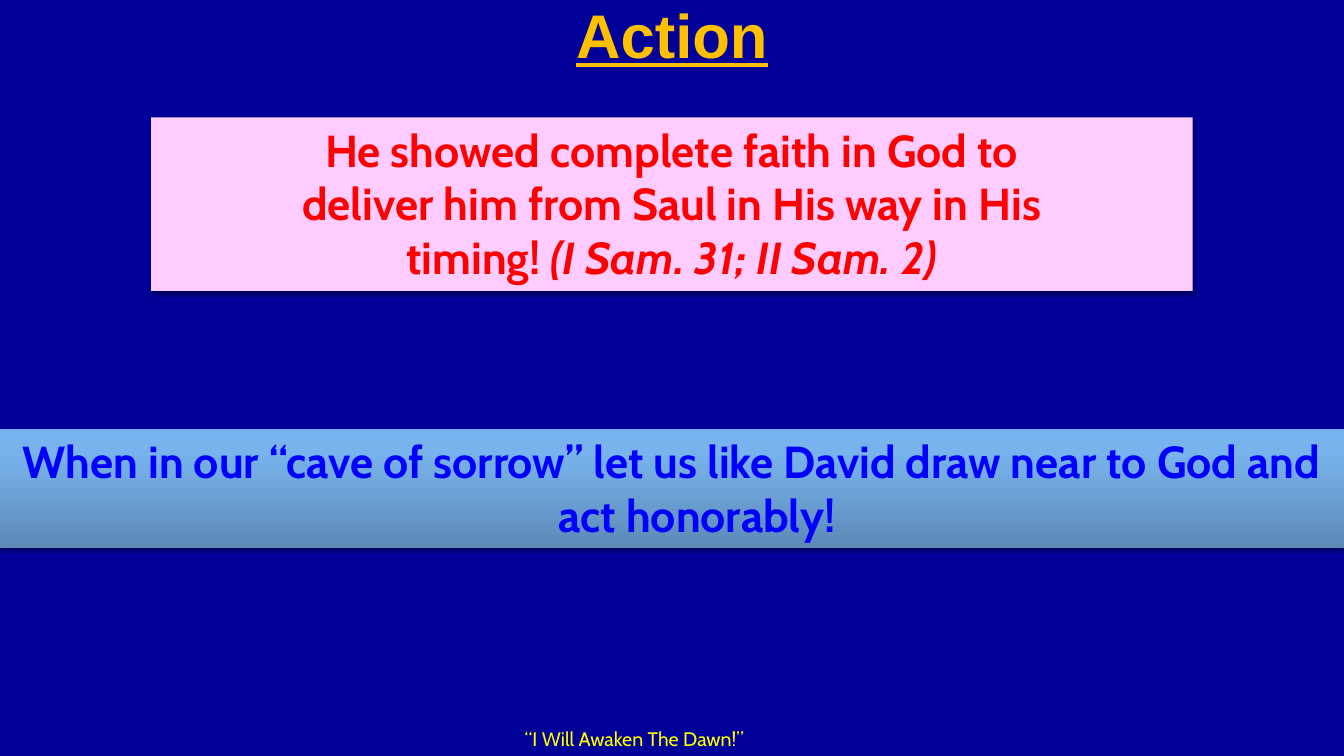
import copy

import pptx
import pptx.dml.color
import pptx.enum.shapes
import pptx.enum.text
import pptx.oxml
import pptx.oxml.ns
import pptx.util

Cm = pptx.util.Cm
Pt = pptx.util.Pt
RGBColor = pptx.dml.color.RGBColor
qn = pptx.oxml.ns.qn

NAVY = RGBColor(0x00, 0x00, 0x99)
GOLD = RGBColor(0xFF, 0xC0, 0x00)
YELLOW = RGBColor(0xFF, 0xFF, 0x00)
PINK = RGBColor(0xFF, 0xCC, 0xFF)
RED = RGBColor(0xFF, 0x00, 0x00)
BLUE = RGBColor(0x00, 0x00, 0xFF)
BAND_STOPS = [
    (0, RGBColor(0x5D, 0x8A, 0xB7)),
    (0.8, RGBColor(0x78, 0xB3, 0xED)),
    (1, RGBColor(0x76, 0xB4, 0xF1)),
]
SLIDE_WIDTH = Cm(33.87)
HANGING = Cm(1.27)
SHADOW = (
    '<a:outerShdw xmlns:a="http://schemas.openxmlformats.org/drawingml/2006/main" '
    'blurRad="40000" dist="23000" dir="5400000" rotWithShape="0">'
    '<a:srgbClr val="000000"><a:alpha val="35000"/></a:srgbClr></a:outerShdw>'
)


def style_run(run, font_name, size, color, bold=False):
    run.font.name = font_name
    run.font.size = Pt(size)
    run.font.color.rgb = color
    run.font.bold = bold


def add_label(slide, text, left, top, width, height, font_name, size, color, bold=False):
    label = slide.shapes.add_textbox(left, top, width, height)
    label.text_frame.word_wrap = True
    label.text_frame.text = text
    paragraph = label.text_frame.paragraphs[0]
    paragraph.alignment = pptx.enum.text.PP_ALIGN.CENTER
    style_run(paragraph.runs[0], font_name, size, color, bold)
    return label


def add_banner(slide, lines, left, top, width, height, color):
    banner = slide.shapes.add_shape(
        pptx.enum.shapes.MSO_SHAPE.RECTANGLE, left, top, width, height)
    banner.line.fill.background()
    banner.shadow.inherit = False
    effects = banner.element.spPr.find(qn("a:effectLst"))
    effects.append(pptx.oxml.parse_xml(SHADOW))
    frame = banner.text_frame
    frame.word_wrap = True
    frame.vertical_anchor = pptx.enum.text.MSO_ANCHOR.TOP
    frame.text = "\n".join(lines)
    for paragraph in frame.paragraphs:
        paragraph.alignment = pptx.enum.text.PP_ALIGN.CENTER
        properties = paragraph._p.get_or_add_pPr()
        properties.set("marL", str(HANGING))
        properties.set("indent", str(-HANGING))
        style_run(paragraph.runs[0], "Cabin", 32, color, True)
    return banner


def fill_gradient(shape, stops):
    shape.fill.gradient()
    shape.fill.gradient_angle = 90
    stop_list = shape.element.spPr.find(qn("a:gradFill")).find(qn("a:gsLst"))
    stop_list.append(copy.deepcopy(stop_list[-1]))
    for gradient_stop, (position, color) in zip(shape.fill.gradient_stops, stops):
        gradient_stop.position = position
        gradient_stop.color.rgb = color


def main():
    presentation = pptx.Presentation()
    presentation.slide_width = SLIDE_WIDTH
    presentation.slide_height = Cm(19.05)
    slide = presentation.slides.add_slide(presentation.slide_layouts[6])
    slide.background.fill.solid()
    slide.background.fill.fore_color.rgb = NAVY

    title = add_label(slide, "Action", 0, 0, SLIDE_WIDTH, Cm(1.7), "Arial", 44, GOLD, True)
    title.text_frame.vertical_anchor = pptx.enum.text.MSO_ANCHOR.MIDDLE
    title.text_frame.paragraphs[0].runs[0].font.underline = True

    add_label(slide, "“I Will Awaken The Dawn!”",
              Cm(9.95), Cm(18.2), Cm(12.07), Cm(0.85), "Cabin", 14, YELLOW)

    faith = add_banner(
        slide,
        ["He showed complete faith in God to",
         "deliver him from Saul in His way in His",
         "timing! "],
        Cm(3.81), Cm(2.96), Cm(26.25), Cm(4.37), RED)
    faith.fill.solid()
    faith.fill.fore_color.rgb = PINK
    verses = faith.text_frame.paragraphs[-1].add_run()
    verses.text = "(I Sam. 31; II Sam. 2)"
    style_run(verses, "Cabin", 32, RED, True)
    verses.font.italic = True

    appeal = add_banner(
        slide,
        ["When in our “cave of sorrow” let us like David draw near to God and act honorably!"],
        0, Cm(10.8), SLIDE_WIDTH, Cm(3), BLUE)
    fill_gradient(appeal, BAND_STOPS)

    presentation.save("out.pptx")


if __name__ == "__main__":
    main()
